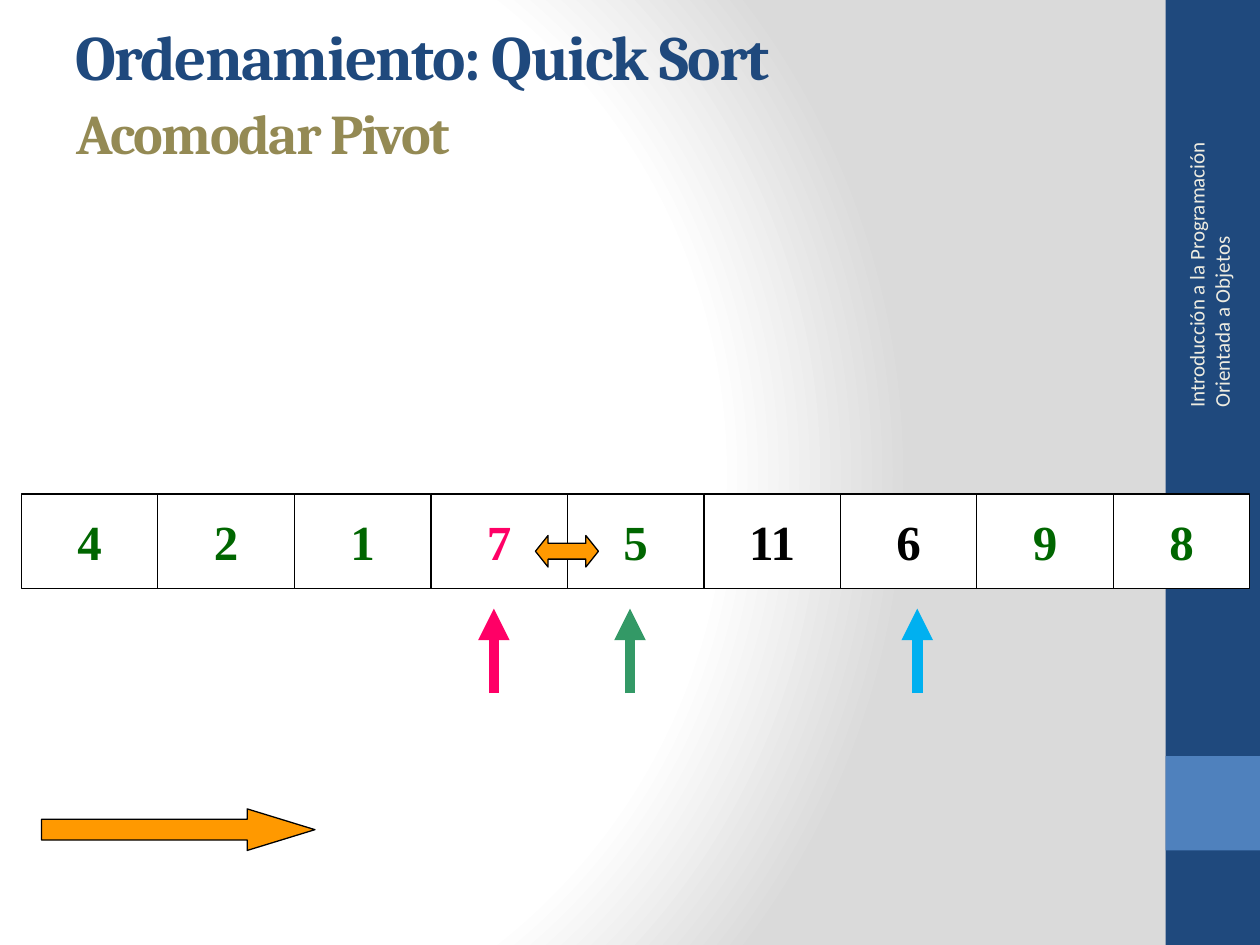
from pptx import Presentation
from pptx.dml.color import RGBColor
from pptx.enum.shapes import MSO_CONNECTOR, MSO_SHAPE
from pptx.enum.text import MSO_ANCHOR, MSO_AUTO_SIZE, PP_ALIGN
from pptx.oxml import parse_xml
from pptx.oxml.ns import nsdecls
from pptx.util import Inches, Pt

NAVY, BLUE, ORANGE = "1F497D", "4F81BD", "FF9900"
GREEN, PINK, BLACK, WHITE = "006600", "FF0066", "000000", "FFFFFF"

CELLS = [("4", GREEN), ("2", GREEN), ("1", GREEN), ("7", PINK), ("5", GREEN),
         ("11", BLACK), ("6", BLACK), ("9", GREEN), ("8", GREEN)]
ROW_LEFT, ROW_TOP, ROW_WIDTH, ROW_HEIGHT = 0.17, 3.92, 9.75, 0.75
POINTERS = [(3.92, PINK), (5, "339966"), (7.28, "00B0F0")]


def rgb(color):
    return RGBColor.from_string(color)


def set_background(slide):
    """Circular gradient from white to light grey."""
    stops = "".join(f'<a:gs pos="{pos}000"><a:srgbClr val="{color}"/></a:gs>'
                    for pos, color in [(0, WHITE), (75, WHITE), (100, "DADADA")])
    background = parse_xml(
        f'<p:bg {nsdecls("p", "a")}><p:bgPr><a:gradFill rotWithShape="1">'
        f'<a:gsLst>{stops}</a:gsLst><a:path path="circle">'
        '<a:fillToRect l="20000" t="50000" r="100000" b="50000"/></a:path>'
        '</a:gradFill><a:effectLst/></p:bgPr></p:bg>')
    slide.element.cSld.insert(0, background)


def write(shape, text, font_name, size, color, bold=False, anchor=MSO_ANCHOR.TOP,
          align=PP_ALIGN.LEFT, wrap=True):
    frame = shape.text_frame
    frame.text = text
    frame.word_wrap = wrap
    frame.auto_size = MSO_AUTO_SIZE.NONE
    frame.vertical_anchor = anchor
    paragraph = frame.paragraphs[0]
    paragraph.alignment = align
    font = paragraph.font
    font.name, font.size, font.bold = font_name, Pt(size), bold
    font.color.rgb = rgb(color)


def write_heading(shape, text, size, color):
    write(shape, text, "Cambria", size, color, bold=True)
    run = shape.text_frame.paragraphs[0].runs[0]
    run.font._element.set("spc", "-100")


def add_block(slide, kind, left, top, width, height, fill, outlined=True):
    block = slide.shapes.add_shape(kind, Inches(left), Inches(top),
                                   Inches(width), Inches(height))
    block.shadow.inherit = False
    block.fill.solid()
    block.fill.fore_color.rgb = rgb(fill)
    if outlined:
        block.line.color.rgb = rgb(BLACK)
        block.line.width = Pt(0.75)
    else:
        block.line.fill.background()
    return block


def add_text_box(slide, left, top, width, height):
    return slide.shapes.add_textbox(Inches(left), Inches(top),
                                    Inches(width), Inches(height))


def add_pointer(slide, x, color):
    """Thick arrow pointing up at the array."""
    pointer = slide.shapes.add_connector(MSO_CONNECTOR.STRAIGHT, Inches(x), Inches(5.5),
                                         Inches(x), Inches(4.83))
    pointer.line.color.rgb = rgb(color)
    pointer.line.width = Pt(6)
    pointer.line._get_or_add_ln().append(
        parse_xml(f'<a:tailEnd {nsdecls("a")} type="triangle"/>'))
    pointer._element.spPr.append(parse_xml(f'<a:effectLst {nsdecls("a")}/>'))


def add_sidebar(slide):
    add_block(slide, MSO_SHAPE.RECTANGLE, 9.25, 0, 0.75, 7.5, NAVY, outlined=False)
    add_block(slide, MSO_SHAPE.RECTANGLE, 9.25, 6, 0.75, 0.75, BLUE, outlined=False)
    course = add_text_box(slide, 8.26, 1.8, 2.67, 0.4)
    course.rotation = 270
    write(course, "Introducción a la Programación Orientada a Objetos",
          "Calibri", 12, "EEECE1", anchor=MSO_ANCHOR.MIDDLE)


def add_array(slide):
    cell_width = ROW_WIDTH / len(CELLS)
    for index, (value, color) in enumerate(CELLS):
        cell = add_block(slide, MSO_SHAPE.RECTANGLE, ROW_LEFT + index * cell_width,
                         ROW_TOP, cell_width, ROW_HEIGHT, WHITE)
        write(cell, value, "Times New Roman", 28, color, bold=True,
              anchor=MSO_ANCHOR.MIDDLE, align=PP_ALIGN.CENTER, wrap=False)


def add_headings(slide):
    title = slide.shapes.title
    title.left, title.top = Inches(0.5), Inches(0.09)
    title.width, title.height = Inches(8.98), Inches(0.66)
    write_heading(title, "Ordenamiento: Quick Sort", 36, NAVY)
    subtitle = add_text_box(slide, 0.51, 0.73, 8.98, 0.66)
    write_heading(subtitle, "Acomodar Pivot", 32, "948A54")


def main():
    deck = Presentation()
    deck.slide_width, deck.slide_height = Inches(10), Inches(7.5)
    slide = deck.slides.add_slide(deck.slide_layouts[5])

    set_background(slide)
    add_sidebar(slide)
    add_array(slide)
    for x, color in POINTERS:
        add_pointer(slide, x, color)

    # Swap of the pivot, and the direction of travel
    swap = add_block(slide, MSO_SHAPE.LEFT_RIGHT_ARROW, 4.25, 4.25, 0.5, 0.25, ORANGE)
    swap.adjustments[0], swap.adjustments[1] = 0.5, 0.4
    direction = add_block(slide, MSO_SHAPE.RIGHT_ARROW, 0.33, 6.42, 2.17, 0.33, ORANGE)
    direction.adjustments[0], direction.adjustments[1] = 0.5, 1.63

    add_headings(slide)
    deck.save("out.pptx")


if __name__ == "__main__":
    main()
